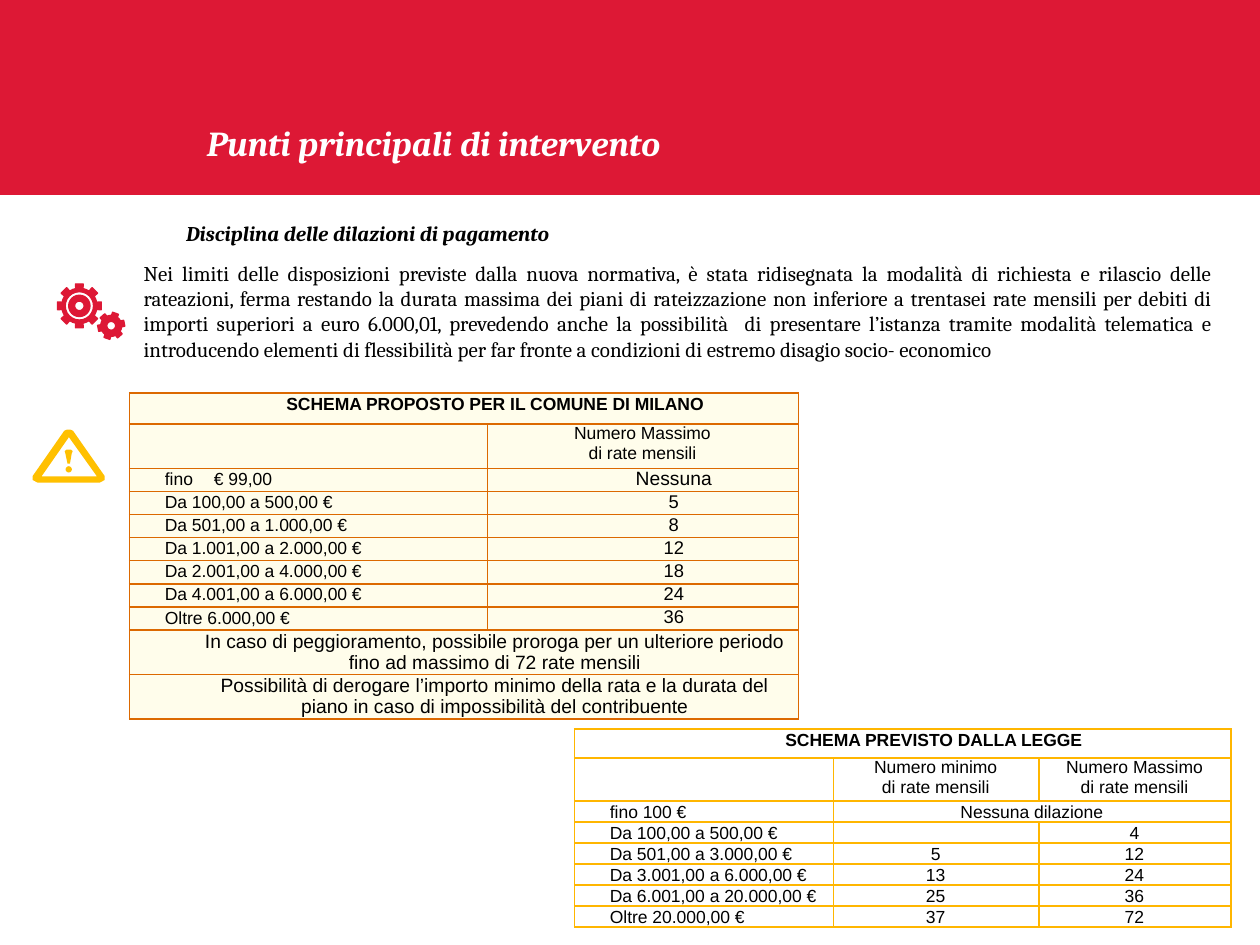
from math import cos, radians, sin

from lxml import etree
from pptx import Presentation
from pptx.dml.color import RGBColor
from pptx.enum.shapes import MSO_SHAPE
from pptx.enum.text import MSO_ANCHOR, MSO_AUTO_SIZE, PP_ALIGN
from pptx.oxml.ns import qn
from pptx.util import Pt

RECTANGLE = MSO_SHAPE.RECTANGLE
LEFT, CENTER, JUSTIFY = PP_ALIGN.LEFT, PP_ALIGN.CENTER, PP_ALIGN.JUSTIFY
TOP, MIDDLE, BOTTOM = MSO_ANCHOR.TOP, MSO_ANCHOR.MIDDLE, MSO_ANCHOR.BOTTOM
NO_FIT = MSO_AUTO_SIZE.NONE

RED = RGBColor(0xDD, 0x18, 0x35)
AMBER = RGBColor(0xFF, 0xC0, 0x00)
WHITE = RGBColor(0xFF, 0xFF, 0xFF)
BLACK = RGBColor(0x00, 0x00, 0x00)
CREAM = RGBColor(0xFF, 0xFD, 0xEB)
ORANGE = RGBColor(0xDC, 0x69, 0x00)
GOLD = RGBColor(0xFF, 0xB6, 0x00)


def ring(center_x, center_y, polar_points):
    """Turn (radius, degrees) pairs into points around a center."""
    return [(center_x + radius * cos(radians(angle)),
             center_y + radius * sin(radians(angle)))
            for radius, angle in polar_points]


def add_outline(contours, color):
    """Draw closed contours as one shape; inner contours become holes."""
    contours = [[(Pt(x), Pt(y)) for x, y in contour] for contour in contours]
    builder = slide.shapes.build_freeform(*contours[0][0], scale=1.0)
    for number, contour in enumerate(contours):
        if number:
            builder.move_to(*contour[0])
        builder.add_line_segments(contour[1:], close=True)
    shape = builder.convert_to_shape()
    shape.shadow.inherit = False
    shape.fill.solid()
    shape.fill.fore_color.rgb = color
    return shape


deck = Presentation()
deck.slide_width, deck.slide_height = Pt(720), Pt(540)
slide = deck.slides.add_slide(deck.slide_layouts[5])

# Red band behind the title
band = slide.shapes.add_shape(RECTANGLE, 0, 0, Pt(720), Pt(111.4))
band.shadow.inherit = False
band.fill.solid()
band.fill.fore_color.rgb = RED
band.line.fill.background()
slide.shapes._spTree.insert(2, band._element)

# Title
title = slide.shapes.title
title.left, title.top, title.width, title.height = Pt(111), Pt(62.6), Pt(420), Pt(34.6)
title.text_frame.text = "Punti principali di intervento"
title.text_frame.auto_size = NO_FIT
title.text_frame.vertical_anchor = BOTTOM

# Subtitle and body text
subtitle = slide.shapes.add_textbox(Pt(99.2), Pt(122.4), Pt(270), Pt(21.6))
subtitle.text_frame.text = "Disciplina delle dilazioni di pagamento"
body = slide.shapes.add_textbox(Pt(75), Pt(145.4), Pt(625), Pt(80))
body.text_frame.text = (
    "Nei limiti delle disposizioni previste dalla nuova normativa, è stata ridisegnata "
    "la modalità di richiesta e rilascio delle rateazioni, ferma restando la durata "
    "massima dei piani di rateizzazione non inferiore a trentasei rate mensili per "
    "debiti di importi superiori a euro 6.000,01, prevedendo anche la possibilità  di "
    "presentare l’istanza tramite modalità telematica e introducendo elementi di "
    "flessibilità per far fronte a condizioni di estremo disagio socio- economico")

for box, size, color, strong, align in [(title, 20, WHITE, True, LEFT),
                                        (subtitle, 12, BLACK, True, LEFT),
                                        (body, 12, BLACK, False, JUSTIFY)]:
    box.text_frame.word_wrap = True
    para = box.text_frame.paragraphs[0]
    para.alignment = align
    para.font.name, para.font.size = "Cambria", Pt(size)
    para.font.bold = para.font.italic = strong
    para.font.color.rgb = color

# Gears: center, teeth, outer and root radius, tooth half angles, turn, hole radii
gears = [(45.4, 174.8, 8, 12.7, 10.1, 10, 12, 0, [8.1, 6.1, 2.7]),
         (63.6, 186.2, 6, 7.8, 6, 13, 17, -11, [2.5])]
gear_contours = []
for x, y, teeth, outer, root, tip, foot, turn, holes in gears:
    rim = []
    for tooth in range(teeth):
        angle = turn + tooth * 360 / teeth
        rim += [(root, angle - foot), (outer, angle - tip), (outer, angle + tip),
                (root, angle + foot), (root, angle + 180 / teeth)]
    gear_contours.append(ring(x, y, rim))
    for radius in holes:
        gear_contours.append(ring(x, y, [(radius, step) for step in range(0, 360, 15)]))
gear_icon = add_outline(gear_contours, RED)
gear_icon.line.color.rgb = RED
gear_icon.line.width = Pt(0.75)

# Warning triangle with exclamation mark
warning_icon = add_outline([
    [(59.8, 272), (41.8, 246.2), (40.3, 245.5), (38.2, 245.5), (36.7, 246.2),
     (18.7, 272), (18.7, 274.3), (21.6, 275.8), (56.9, 275.8), (59.8, 274.3)],
    [(23.8, 272.2), (39.4, 249.8), (55.4, 272.2)],
    [(37.4, 259.2), (37, 257.8), (38, 257), (40.6, 257), (41.6, 257.8),
     (41, 259.2), (40, 265), (38.6, 265)],
    ring(39.3, 268.2, [(1.8, step) for step in range(0, 360, 30)]),
], AMBER)
warning_icon.line.fill.background()

# Tables: rows hold height, size of the last cell and texts; a short row is merged
law_rows = [
    (16.6, 10, ["SCHEMA PREVISTO DALLA LEGGE"]),
    (24.5, 10, ["", "Numero minimo\ndi rate mensili", "Numero Massimo\ndi rate mensili"]),
    (12, 10, ["fino 100 €", "Nessuna dilazione"]),
    (12, 10, ["Da 100,00 a 500,00 €", "", "4"]),
    (12, 10, ["Da 501,00 a 3.000,00 €", "5", "12"]),
    (12, 10, ["Da 3.001,00 a 6.000,00 €", "13", "24"]),
    (12, 10, ["Da 6.001,00 a 20.000,00 €", "25", "36"]),
    (12, 10, ["Oltre 20.000,00 €", "37", "72"]),
]
city_rows = [
    (17.7, 10, ["SCHEMA PROPOSTO PER IL COMUNE DI MILANO"]),
    (25.4, 10, ["", "Numero Massimo\ndi rate mensili"]),
    (13.2, 11, ["fino\t€ 99,00", "Nessuna"]),
    (13.2, 10.5, ["Da 100,00 a 500,00 €", "5"]),
    (13.2, 10.5, ["Da 501,00 a 1.000,00 €", "8"]),
    (13.2, 10.5, ["Da 1.001,00 a 2.000,00 €", "12"]),
    (13.2, 10.5, ["Da 2.001,00 a 4.000,00 €", "18"]),
    (13.2, 10.5, ["Da 4.001,00 a 6.000,00 €", "24"]),
    (13.2, 10.5, ["Oltre 6.000,00 €", "36"]),
    (25.4, 11, ["In caso di peggioramento, possibile proroga per un ulteriore periodo "
                "fino ad massimo di 72 rate mensili"]),
    (25.4, 11, ["Possibilità di derogare l’importo minimo della rata e la durata del "
                "piano in caso di impossibilità del contribuente"]),
]
tables = [(328.3, 416.6, [148, 117.4, 109.8], law_rows, WHITE, GOLD, 0),
          (74, 224.6, [204.5, 177.8], city_rows, CREAM, ORANGE, 36)]

for left, top, widths, rows, fill, border, value_indent in tables:
    height = sum(row[0] for row in rows)
    table = slide.shapes.add_table(len(rows), len(widths), Pt(left), Pt(top),
                                   Pt(sum(widths)), Pt(height)).table
    table.first_row = table.horz_banding = False
    for column, width in zip(table.columns, widths):
        column.width = Pt(width)

    for r, (row_height, last_size, texts) in enumerate(rows):
        table.rows[r].height = Pt(row_height)
        merged = len(texts) == 1
        if len(texts) < len(widths):
            table.cell(r, len(texts) - 1).merge(table.cell(r, len(widths) - 1))

        for c in range(len(widths)):
            cell = table.cell(r, c)
            cell.margin_left, cell.margin_right = Pt(2.2), Pt(2.9)
            cell.margin_top = cell.margin_bottom = 0
            cell.vertical_anchor = MIDDLE if merged and r else TOP
            for side in ("a:lnL", "a:lnR", "a:lnT", "a:lnB"):
                line = etree.SubElement(cell._tc.get_or_add_tcPr(), qn(side), w=str(Pt(1)))
                line_fill = etree.SubElement(line, qn("a:solidFill"))
                etree.SubElement(line_fill, qn("a:srgbClr"), val=str(border))
            cell.fill.solid()
            cell.fill.fore_color.rgb = fill

            text = texts[c] if c < len(texts) else ""
            cell.text_frame.text = text
            label = c == 0 and not merged
            indent = 36 if c == 0 else value_indent
            if "\t" in text:
                indent = 46
            for para in cell.text_frame.paragraphs:
                para.alignment = LEFT if label else CENTER
                if text and "\n" not in text:
                    para.line_spacing = Pt(12)
                    properties = para._p.get_or_add_pPr()
                    properties.set("marL", str(Pt(indent)))
                    properties.set("indent", str(Pt(18 - indent) if label else 0))
                para.font.name = "Arial"
                para.font.size = Pt(last_size if c == len(texts) - 1 else 10)
                para.font.bold = r == 0
                para.font.color.rgb = BLACK
                if not text:
                    etree.SubElement(para._p, qn("a:endParaRPr"), sz="1000")

deck.save("out.pptx")
